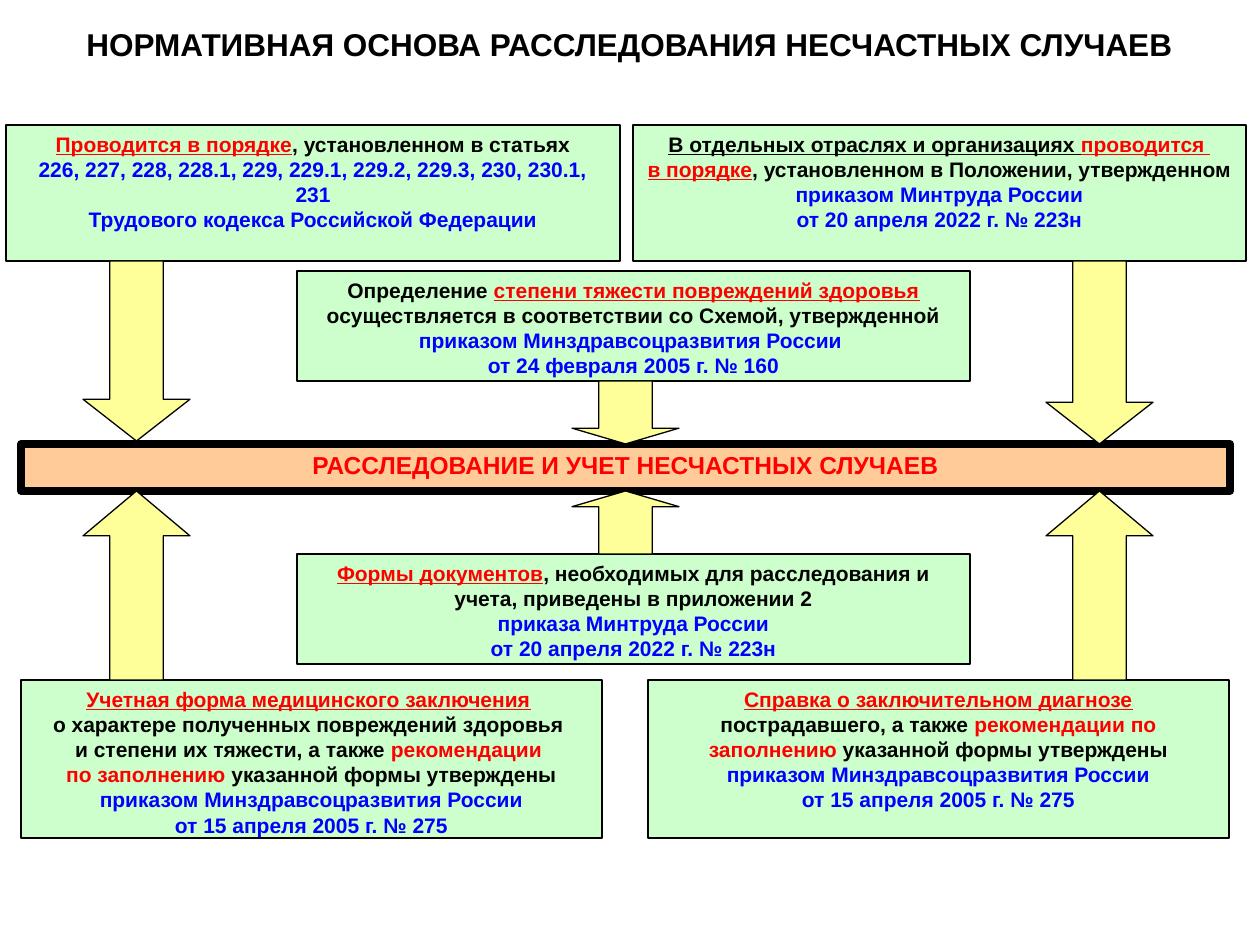
from copy import deepcopy
from dataclasses import dataclass

from pptx import Presentation
from pptx import util as u
from pptx.dml.color import RGBColor
from pptx.enum import shapes, text


@dataclass(frozen=True)
class Theme:
    font: str = "Arial"
    black: str = "000000"
    red: str = "FF0000"
    blue: str = "0000FF"
    green: str = "CCFFCC"
    orange: str = "FFCC99"
    yellow: str = "FFFF99"
    title_size: int = 18
    banner_size: int = 14
    body_size: int = 12
    thin: float = 0.75
    thick: float = 4.5


THEME = Theme()
STYLES = {
    "plain": (THEME.black, False),
    "underlined": (THEME.black, True),
    "key": (THEME.red, True),
    "red": (THEME.red, False),
    "order": (THEME.blue, False),
}

TITLE = [[("НОРМАТИВНАЯ ОСНОВА РАССЛЕДОВАНИЯ НЕСЧАСТНЫХ СЛУЧАЕВ", "plain")]]
BANNER = [[("РАССЛЕДОВАНИЕ И УЧЕТ НЕСЧАСТНЫХ СЛУЧАЕВ", "red")]]
DIAGNOSIS_ORDER = [
    [("приказом Минздравсоцразвития России", "order")],
    [("от 15 апреля 2005 г. № 275", "order")],
]
LABOUR_DATE = [("от 20 апреля 2022 г. № 223н", "order")]

BOXES = [
    ((6, 125, 614, 136), [
        [("Проводится в порядке", "key"), (", установленном в статьях", "plain")],
        [("226, 227, 228, 228.1, 229, 229.1, 229.2, 229.3, 230, 230.1, 231", "order")],
        [("Трудового кодекса Российской Федерации", "order")],
    ]),
    ((633, 125, 613, 136), [
        [("В отдельных отраслях и организациях ", "underlined"),
         ("проводится \nв порядке", "key"),
         (", установленном в Положении, утвержденном", "plain")],
        [("приказом Минтруда России", "order")],
        LABOUR_DATE,
    ]),
    ((297, 271, 673, 110), [
        [("Определение ", "plain"),
         ("степени тяжести повреждений здоровья", "key"),
         (" осуществляется в соответствии со Схемой, утвержденной", "plain")],
        [("приказом Минздравсоцразвития России \nот 24 февраля 2005 г. № 160", "order")],
    ]),
    ((297, 554, 673, 110), [
        [("Формы документов", "key"),
         (", необходимых для расследования и учета, приведены в приложении 2", "plain")],
        [("приказа Минтруда России", "order")],
        LABOUR_DATE,
    ]),
    ((648, 680, 581, 158), [
        [("Справка о заключительном диагнозе", "key"),
         (" пострадавшего, а также ", "plain"),
         ("рекомендации по заполнению", "red"),
         (" указанной формы утверждены", "plain")],
        *DIAGNOSIS_ORDER,
    ]),
    ((21, 680, 581, 158), [
        [("Учетная форма медицинского заключения", "key"),
         (" \nо характере полученных повреждений здоровья \n"
          "и степени их тяжести, а также ", "plain"),
         ("рекомендации \nпо заполнению", "red"),
         (" указанной формы утверждены", "plain")],
        *DIAGNOSIS_ORDER,
    ]),
]

BANNER_PLACE = (21, 444, 1209, 47)
ARROW_WIDTH = 107
LEFT, MIDDLE, RIGHT = 83, 572, 1046
DOWN_ARROWS = [(MIDDLE, 381, 444, 0.25), (RIGHT, 261, 444, 0.39), (LEFT, 261, 441, 0.39)]
UP_ARROWS = [(MIDDLE, 491, 554, 0.25), (RIGHT, 491, 680, 0.42), (LEFT, 491, 680, 0.42)]


def px(value):
    return u.Emu(round(value * 914400 / 126))


def write(frame, paragraphs, size=THEME.body_size, wrap=True, anchor=text.MSO_ANCHOR.TOP):
    frame.word_wrap = wrap
    frame.vertical_anchor = anchor
    for index, runs in enumerate(paragraphs):
        paragraph = frame.add_paragraph() if index else frame.paragraphs[0]
        paragraph.alignment = text.PP_ALIGN.CENTER
        for content, style in runs:
            color, underline = STYLES[style]
            for number, line in enumerate(content.split("\n")):
                if number:
                    paragraph.add_line_break()
                    paragraph._p[-1].append(deepcopy(run._r.rPr))
                run = paragraph.add_run()
                run.text = line
                font = run.font
                font.name, font.size = THEME.font, u.Pt(size)
                font.bold, font.underline = True, underline
                font.color.rgb = RGBColor.from_string(color)


def add_block(slide, kind, place, fill, line_width=THEME.thin):
    shape = slide.shapes.add_shape(kind, *map(px, place))
    shape.shadow.inherit = False
    shape.fill.solid()
    shape.fill.fore_color.rgb = RGBColor.from_string(fill)
    shape.line.color.rgb = RGBColor.from_string(THEME.black)
    shape.line.width = u.Pt(line_width)
    return shape


def add_arrows(slide, kind, arrows):
    for left, top, bottom, head in arrows:
        place = (left, top, ARROW_WIDTH, bottom - top)
        arrow = add_block(slide, kind, place, THEME.yellow)
        arrow.adjustments[0] = 0.5
        arrow.adjustments[1] = head


def main():
    presentation = Presentation()
    presentation.slide_width, presentation.slide_height = px(1260), px(945)
    slide = presentation.slides.add_slide(presentation.slide_layouts[5])

    title = slide.shapes.title
    title.left, title.top, title.width, title.height = map(px, (68, 16, 1123, 56))
    write(title.text_frame, TITLE, size=THEME.title_size, wrap=False,
          anchor=text.MSO_ANCHOR.MIDDLE)

    rectangle = shapes.MSO_SHAPE.RECTANGLE
    banner = add_block(slide, rectangle, BANNER_PLACE, THEME.orange, THEME.thick)
    write(banner.text_frame, BANNER, size=THEME.banner_size)
    for place, paragraphs in BOXES:
        box = add_block(slide, rectangle, place, THEME.green)
        write(box.text_frame, paragraphs)

    add_arrows(slide, shapes.MSO_SHAPE.DOWN_ARROW, DOWN_ARROWS)
    add_arrows(slide, shapes.MSO_SHAPE.UP_ARROW, UP_ARROWS)
    presentation.save("out.pptx")


if __name__ == "__main__":
    main()
